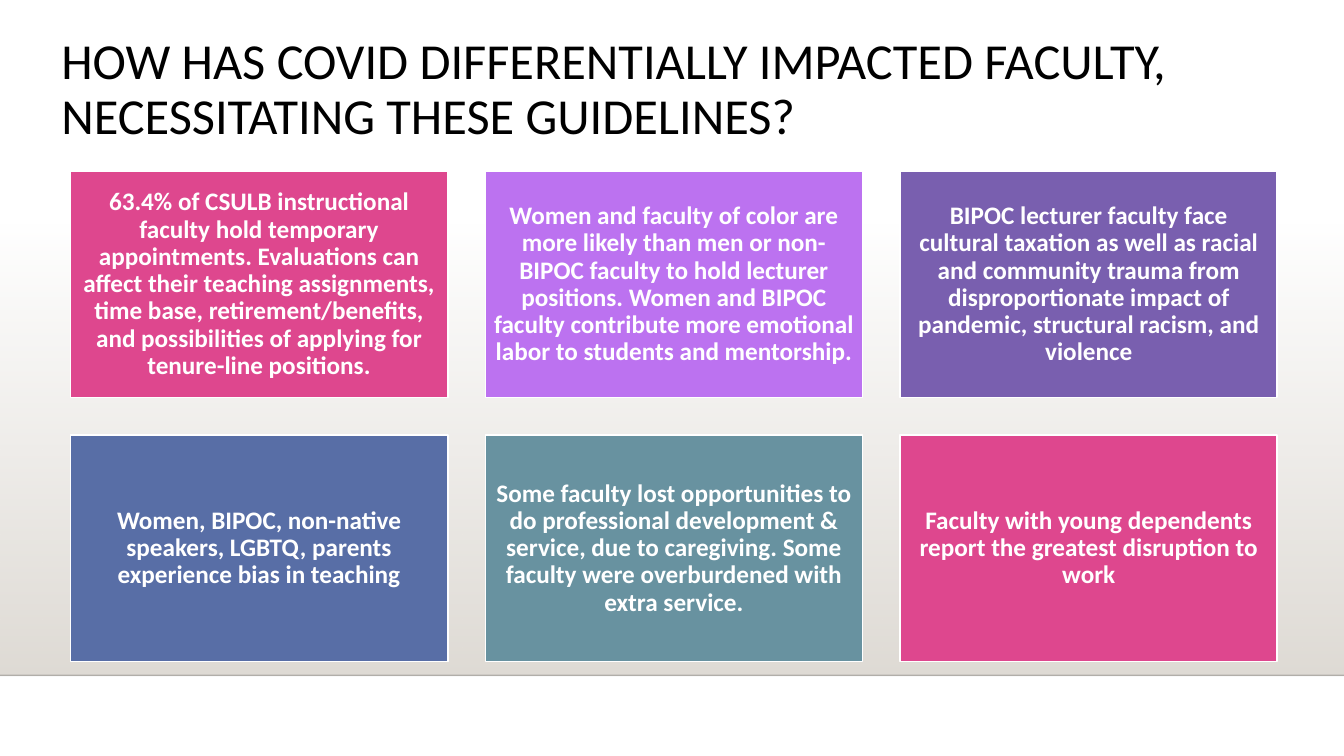
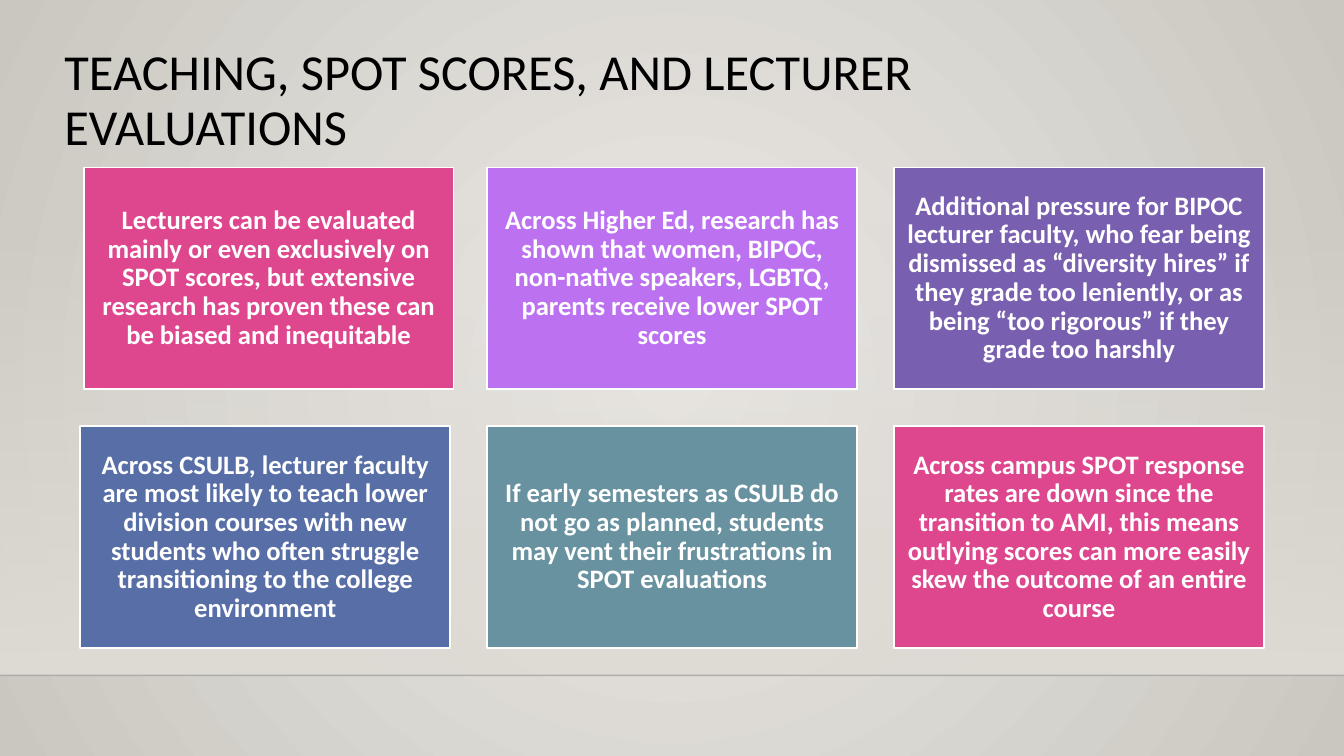
from lxml import etree
from pptx import Presentation
from pptx.dml.color import RGBColor
from pptx.enum import shapes, text
from pptx.oxml import ns
from pptx.util import Pt

WIDTH, HEIGHT = 960, 540
FLOOR_TOP, FLOOR_BOTTOM = 159.1, 482.4
COLUMNS = 3


def color(hex_string):
    return RGBColor.from_string(hex_string)


def add_element(parent, tag, **attributes):
    return etree.SubElement(parent, ns.qn(tag), attributes)


def set_alpha(color_element, percent):
    add_element(color_element, "a:alpha", val=str(percent * 1000))


class Deck:
    """Shared style and the slide being built."""

    font = "Calibri"
    ink, white = "000000", "FFFFFF"
    floor_color, edge_color = "DFDBD5", "000001"
    card_colors = ["DE478E", "BC72F0", "795FAF", "586EA6", "6892A0", "DE478E"]
    title_size = 36
    line_spacing = 0.9

    def __init__(self):
        self.presentation = Presentation()
        self.presentation.slide_width = Pt(WIDTH)
        self.presentation.slide_height = Pt(HEIGHT)
        self.slide = None

    def new_slide(self, glow=None):
        self.slide = self.presentation.slides.add_slide(self.presentation.slide_layouts[6])
        if glow:
            self.radial_background(*glow)
        else:
            fill = self.slide.background.fill
            fill.solid()
            fill.fore_color.rgb = color(self.white)
        self.floor()

    def gradient(self, fill, start, end):
        fill.gradient()
        for stop, hex_string in zip(fill.gradient_stops, (start, end)):
            stop.color.rgb = color(hex_string)
        fill.gradient_stops[0].position = 0
        fill.gradient_stops[1].position = 1
        fill.gradient_angle = 270

    def radial_background(self, center, rim):
        self.gradient(self.slide.background.fill, center, rim)
        gradient = self.slide.element.find(".//" + ns.qn("a:gradFill"))
        gradient.remove(gradient.find(ns.qn("a:lin")))
        circle = add_element(gradient, "a:path", path="circle")
        add_element(circle, "a:fillToRect", l="50000", t="50000", r="50000", b="50000")

    def rectangle(self, left, top, width, height):
        shape = self.slide.shapes.add_shape(
            shapes.MSO_SHAPE.RECTANGLE, Pt(left), Pt(top), Pt(width), Pt(height))
        shape.shadow.inherit = False
        return shape

    def floor(self):
        # Band that fades in downwards
        band = self.rectangle(0, FLOOR_TOP, WIDTH, FLOOR_BOTTOM - FLOOR_TOP)
        band.line.fill.background()
        self.gradient(band.fill, self.floor_color, self.floor_color)
        set_alpha(band.element.find(".//" + ns.qn("a:gs"))[0], 0)

        # Faint edge under the band
        edge = self.slide.shapes.add_connector(
            shapes.MSO_CONNECTOR.STRAIGHT,
            Pt(0), Pt(FLOOR_BOTTOM), Pt(WIDTH), Pt(FLOOR_BOTTOM))
        edge.line.width = Pt(1)
        edge.line.color.rgb = color(self.edge_color)
        set_alpha(edge.element.find(".//" + ns.qn("a:srgbClr")), 20)
        add_element(edge.element.spPr, "a:effectLst")

    def add_text(self, shape, wording, size, hex_string, alignment, bold=False):
        shape.text_frame.word_wrap = True
        paragraph = shape.text_frame.paragraphs[0]
        paragraph.alignment = alignment
        paragraph.line_spacing = self.line_spacing
        run = paragraph.add_run()
        run.text = wording
        run.font.name = self.font
        run.font.size = Pt(size)
        run.font.bold = bold
        run.font.color.rgb = color(hex_string)

    def title(self, wording, left, top, width):
        box = self.slide.shapes.add_textbox(Pt(left), Pt(top), Pt(width), Pt(89.3))
        self.add_text(box, wording, self.title_size, self.ink, text.PP_ALIGN.LEFT)

    def card(self, wording, left, top, width, height, fill, size):
        card = self.rectangle(left, top, width, height)
        card.fill.solid()
        card.fill.fore_color.rgb = color(fill)
        card.line.color.rgb = color(self.white)
        card.line.width = Pt(1.25)
        frame = card.text_frame
        frame.vertical_anchor = text.MSO_ANCHOR.MIDDLE
        inset = Pt(0.3 * size)
        frame.margin_left = frame.margin_right = inset
        frame.margin_top = frame.margin_bottom = inset
        self.add_text(card, wording, size, self.white, text.PP_ALIGN.CENTER, bold=True)

    def card_grid(self, wordings, left, top, width, size, first_shift=0):
        height, gap = 0.6 * width, 0.1 * width
        for index, (wording, fill) in enumerate(zip(wordings, self.card_colors)):
            row, column = divmod(index, COLUMNS)
            shift = first_shift if index == 0 else 0
            self.card(wording, left + column * (width + gap) + shift,
                      top + row * (height + gap), width, height, fill, size)


def main():
    deck = Deck()

    # Impact on faculty
    deck.new_slide()
    deck.title("HOW HAS COVID DIFFERENTIALLY IMPACTED FACULTY, "
               "NECESSITATING THESE GUIDELINES?", 36.7, 22.3, 854)
    deck.card_grid([
        "63.4% of CSULB instructional faculty hold temporary appointments. "
        "Evaluations can affect their teaching assignments, time base, "
        "retirement/benefits, and possibilities of applying for tenure-line positions.",
        "Women and faculty of color are more likely than men or non-BIPOC faculty "
        "to hold lecturer positions. Women and BIPOC faculty contribute more "
        "emotional labor to students and mentorship.",
        "BIPOC lecturer faculty face cultural taxation as well as racial and "
        "community trauma from disproportionate impact of pandemic, structural "
        "racism, and violence",
        "Women, BIPOC, non-native speakers, LGBTQ, parents experience bias in teaching",
        "Some faculty lost opportunities to do professional development & service, "
        "due to caregiving. Some faculty were overburdened with extra service.",
        "Faculty with young dependents report the greatest disruption to work",
    ], left=50.4, top=122.4, width=269.4, size=18)

    # Teaching evaluations
    deck.new_slide(glow=("ECEAE7", "CAC7C1"))
    deck.title("TEACHING, SPOT SCORES, AND LECTURER EVALUATIONS", 38.9, 30.2, 794)
    deck.card_grid([
        "Lecturers can be evaluated mainly or even exclusively on SPOT scores, "
        "but extensive research has proven these can be biased and inequitable",
        "Across Higher Ed, research has shown that women, BIPOC, non-native "
        "speakers, LGBTQ, parents receive lower SPOT scores",
        "Additional pressure for BIPOC lecturer faculty, who fear being dismissed "
        "as “diversity hires” if they grade too leniently, or as being "
        "“too rigorous” if they grade too harshly",
        "Across CSULB, lecturer faculty are most likely to teach lower division "
        "courses with new students who often struggle transitioning to the "
        "college environment",
        "If early semesters as CSULB do not go as planned, students may vent "
        "their frustrations in SPOT evaluations",
        "Across campus SPOT response rates are down since the transition to AMI, "
        "this means outlying scores can more easily skew the outcome of an "
        "entire course",
    ], left=57.4, top=119.6, width=264.2, size=19, first_shift=2.4)

    deck.presentation.save("out.pptx")


if __name__ == "__main__":
    main()
